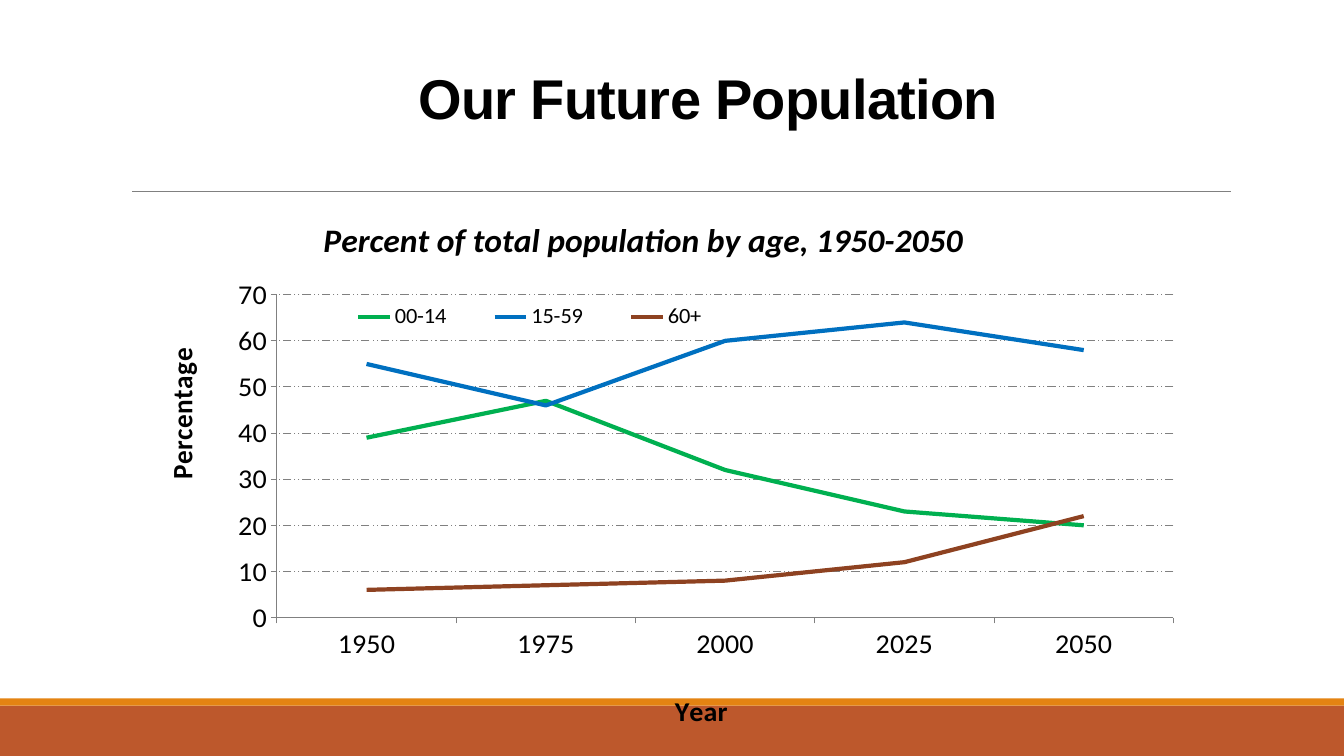
from lxml.etree import SubElement as Sub
from pptx import Presentation
from pptx.chart.data import CategoryChartData as Data
from pptx.dml.color import RGBColor as RGB
from pptx.enum.chart import XL_CHART_TYPE as Kind, XL_LEGEND_POSITION as Spot
from pptx.enum.chart import XL_MARKER_STYLE as Mark, XL_TICK_MARK as Tick
from pptx.enum.dml import MSO_LINE as Dash
from pptx.enum.shapes import MSO_CONNECTOR as Conn, MSO_SHAPE as Shape
from pptx.enum.text import MSO_ANCHOR as Anchor, PP_ALIGN as Align
from pptx.oxml.ns import qn
from pptx.util import Inches, Pt

HUES = {"ink": "000000", "rule": "808080", "rust": "BD582C", "gold": "E48312",
        "green": "00B050", "blue": "0070C0", "brown": "8E4221"}
YEARS = ["1950", "1975", "2000", "2025", "2050"]
AGES = [("00-14", "green", (39, 47, 32, 23, 20)),
        ("15-59", "blue", (55, 46, 60, 64, 58)),
        ("60+", "brown", (6, 7, 8, 12, 22))]


def hue(name):
    return RGB.from_string(HUES[name])


def style(font, size, face="Calibri", bold=False, slant=False):
    font.size, font.name = Pt(size), face
    font.bold, font.italic = bold, slant
    font.color.rgb = hue("ink")


def stroke(line, name, width):
    line.color.rgb = hue(name)
    line.width = Pt(width)


def place(node, index, inner=False, **spots):
    """Set a manual layout, in shares of the chart's box."""
    for old in node.findall(qn("c:layout")):
        node.remove(old)
    frame = node.makeelement(qn("c:layout"))
    node.insert(index, frame)
    manual = Sub(frame, qn("c:manualLayout"))
    if inner:
        Sub(manual, qn("c:layoutTarget")).set("val", "inner")
    for axis in "xy":
        Sub(manual, qn(f"c:{axis}Mode")).set("val", "edge")
    for key, share in spots.items():
        Sub(manual, qn(f"c:{key}")).set("val", str(share))


def label(owner, text, size, x, y, slant=False, turn=None):
    """Give a chart or an axis its title."""
    title = owner.chart_title if hasattr(owner, "chart_title") else owner.axis_title
    frame = title.text_frame
    run = frame.paragraphs[0].add_run()
    run.text = text
    style(run.font, size, bold=True, slant=slant)
    if turn is not None:
        frame._txBody.find(qn("a:bodyPr")).set("rot", str(turn * 60000))
    place(title._element, 1, x=x, y=y)


def footer(slide, left, top, width, height):
    # Bottom band with a thin strip along its upper edge
    strip = 0.07
    for name, y, tall in (("rust", top + strip, height - strip), ("gold", top, strip)):
        band = slide.shapes.add_shape(Shape.RECTANGLE, Inches(left), Inches(y),
                                      Inches(width), Inches(tall))
        band.shadow.inherit = False
        band.fill.solid()
        band.fill.fore_color.rgb = hue(name)
        band.line.fill.background()


def divider(slide, left, top, width):
    # Rule under the heading
    rule = slide.shapes.add_connector(Conn.STRAIGHT, Inches(left), Inches(top),
                                      Inches(left + width), Inches(top))
    stroke(rule.line, "rule", 0.5)
    Sub(rule._element.spPr, qn("a:effectLst"))


def heading(slide, left, top, width, height):
    # Slide title
    box = slide.shapes.add_textbox(Inches(left), Inches(top), Inches(width), Inches(height))
    frame = box.text_frame
    frame.word_wrap = True
    frame.vertical_anchor = Anchor.BOTTOM
    para = frame.paragraphs[0]
    para.alignment, para.line_spacing = Align.CENTER, 0.85
    run = para.add_run()
    run.text = "Our Future Population"
    style(run.font, 40, "Arial", bold=True)
    run._r.get_or_add_rPr().set("spc", "-50")


def trend(slide, left, top, width, height):
    # Line chart of the age groups
    data = Data()
    data.categories = YEARS
    for name, _, shares in AGES:
        data.add_series(name, shares)
    chart = slide.shapes.add_chart(Kind.LINE, Inches(left), Inches(top), Inches(width),
                                   Inches(height), data).chart
    style(chart.font, 20)
    place(chart._chartSpace.chart.plotArea, 0, inner=True, x=0.131, y=0.204, w=0.865, h=0.602)
    label(chart, "Percent of total population by age, 1950-2050", 24, 0.17, 0.05, slant=True)

    # Series
    plot = chart.plots[0]
    plot.vary_by_categories = False
    for line, (_, name, _) in zip(plot.series, AGES):
        line.smooth = False
        line.marker.style = Mark.NONE
        stroke(line.format.line, name, 3)

    # Axes
    years, share = chart.category_axis, chart.value_axis
    for axis in (years, share):
        axis.major_tick_mark, axis.minor_tick_mark = Tick.OUTSIDE, Tick.NONE
        stroke(axis.format.line, "rule", 0.75)
        style(axis.tick_labels.font, 20)
    share.minimum_scale, share.maximum_scale, share.major_unit = 0, 70, 10
    share.has_major_gridlines = True
    grid = share.major_gridlines.format.line
    stroke(grid, "rule", 0.75)
    grid.dash_style = Dash.DASH_DOT_DOT
    label(years, "Year", 20, 0.51, 0.935)
    label(share, "Percentage", 20, 0.015, 0.3, turn=-90)

    # Legend
    chart.has_legend = True
    key = chart.legend
    key.position = Spot.RIGHT
    key.include_in_layout = True
    style(key.font, 16)
    place(key._element, 1, x=0.17, y=0.21, w=0.41, h=0.07)


def main():
    deck = Presentation()
    deck.slide_width, deck.slide_height = Inches(13.33), Inches(7.5)
    slide = deck.slides.add_slide(deck.slide_layouts[6])
    footer(slide, 0, 6.93, 13.33, 0.57)
    divider(slide, 1.31, 1.9, 10.9)
    heading(slide, 2.15, 0.19, 9.75, 1.16)
    trend(slide, 1.4, 1.84, 10.28, 5.47)
    deck.save("out.pptx")


if __name__ == "__main__":
    main()
